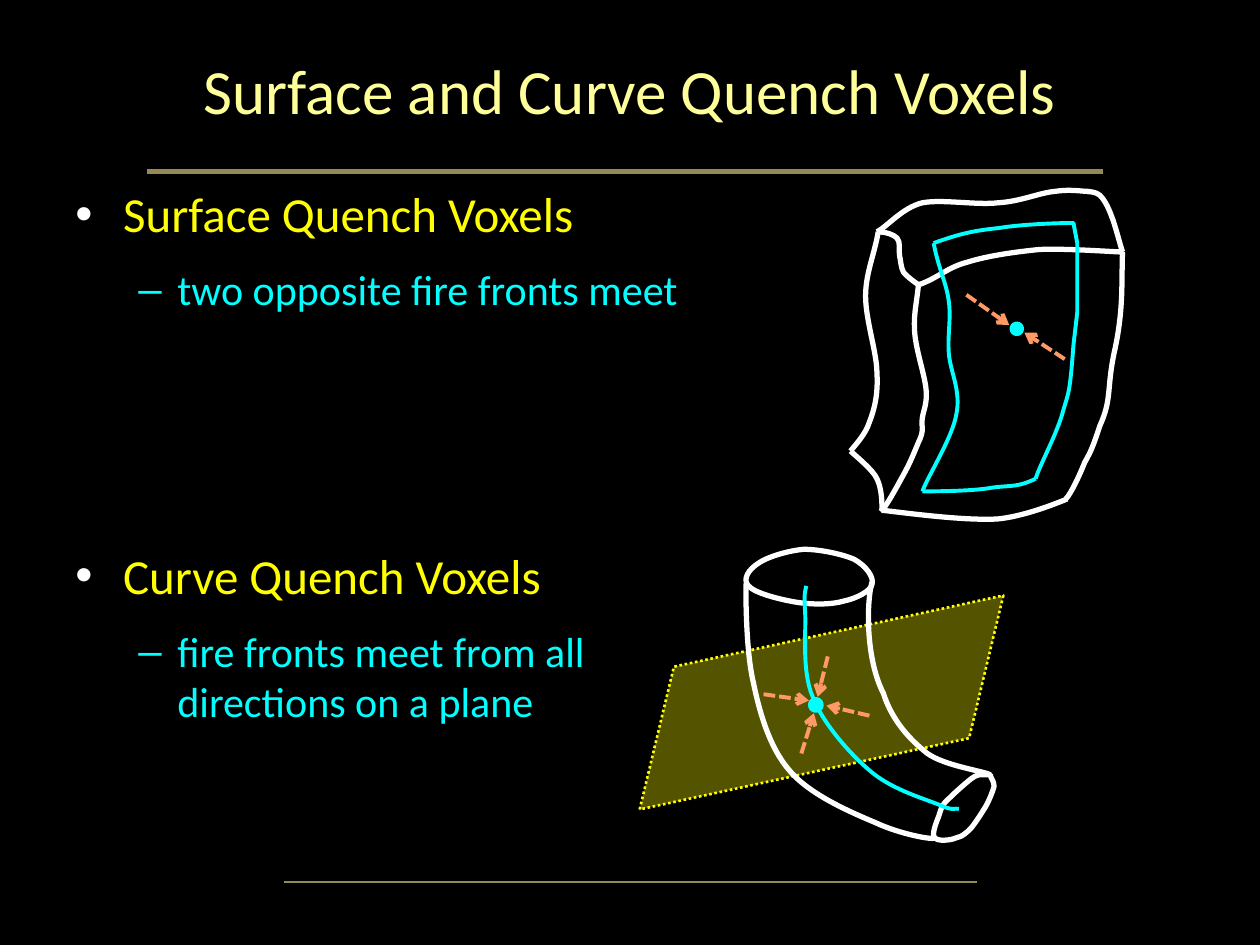
from lxml.etree import SubElement
from pptx import Presentation
from pptx.dml.color import RGBColor
from pptx.enum.dml import MSO_LINE as Dash
from pptx.enum.shapes import MSO_CONNECTOR as Connector, MSO_SHAPE as Shape
from pptx.enum.text import MSO_ANCHOR as Anchor, PP_ALIGN as Align
from pptx.oxml.ns import qn
from pptx.util import Emu, Pt

EMU_PER_PX = 9144
BLACK = RGBColor(0x00, 0x00, 0x00)
WHITE = RGBColor(0xFF, 0xFF, 0xFF)
CREAM = RGBColor(0xFF, 0xFF, 0x99)
YELLOW = RGBColor(0xFF, 0xFF, 0x00)
CYAN = RGBColor(0x00, 0xFF, 0xFF)
ORANGE = RGBColor(0xFF, 0x99, 0x66)
OLIVE = RGBColor(0x94, 0x8A, 0x54)

TITLE_FONT = {"name": "Calibri", "size": Pt(36)}
BULLET_LEVELS = [
    {"mark": "•", "mark_color": "FFFFFF", "left": 38, "hang": 38,
     "color": YELLOW, "font": {"name": "Calibri", "size": Pt(28)},
     "spacing": {"space_before": Pt(0), "space_after": Pt(6)}},
    {"mark": "–", "mark_color": "00FFFF", "left": 81, "hang": 31,
     "color": CYAN, "font": {"name": "Calibri", "size": Pt(24)},
     "spacing": {"level": 1, "space_before": Pt(6), "space_after": Pt(6)}},
]

SHEET_OUTLINES = [
    [(696, 184), (704, 180, 716, 165, 732, 161), (748, 158, 775, 163, 792, 161),
     (810, 160, 825, 153, 837, 152), (849, 150, 859, 152, 864, 152)],
    [(697, 184), (703, 184, 709, 186, 712, 189), (715, 192, 713, 199, 714, 203),
     (715, 208, 715, 212, 717, 216), (720, 220, 729, 226, 729, 226)],
    [(863, 152), (863, 152, 870, 152, 873, 155), (876, 158, 879, 163, 882, 171),
     (885, 178, 890, 198, 891, 200)],
    [(729, 226), (727, 244, 725, 250, 726, 264), (727, 278, 734, 298, 735, 309),
     (736, 321, 733, 325, 732, 332), (731, 339, 734, 341, 729, 351),
     (724, 363, 722, 368, 717, 377), (712, 386, 703, 403, 699, 406)],
    [(891, 200), (890, 223, 892, 244, 885, 277), (878, 308, 883, 316, 873, 338),
     (867, 356, 866, 358, 861, 367), (857, 377, 850, 392, 846, 396)],
    [(700, 405), (733, 409, 766, 413, 791, 412), (815, 410, 847, 396, 847, 396)],
    [(697, 184), (694, 202, 687, 217, 687, 235), (687, 254, 696, 280, 696, 296),
     (697, 313, 694, 325, 690, 335), (687, 345, 678, 354, 675, 358)],
    [(675, 358), (678, 361, 693, 373, 696, 380), (700, 388, 700, 400, 700, 405)],
    [(729, 226), (744, 221, 752, 212, 768, 208), (784, 203, 805, 200, 825, 198),
     (846, 197, 885, 200, 891, 200)],
]
QUENCH_SURFACE = [
    [(741, 193), (763, 185, 774, 183, 793, 181), (811, 178, 840, 177, 852, 177)],
    [(741, 193), (745, 214, 751, 224, 753, 239), (755, 253, 752, 265, 753, 280),
     (754, 295, 763, 310, 759, 329), (756, 347, 737, 377, 732, 390)],
    [(849, 177), (852, 177), (855, 193), (855, 226), (855, 248), (852, 274),
     (849, 315, 848, 311, 843, 329), (838, 346, 824, 372, 822, 380)],
    [(732, 390), (741, 390, 772, 390, 788, 387), (804, 385, 807, 387, 822, 380)],
]
TUBE_SIDES = [
    [(592, 463), (592, 474, 592, 517, 598, 542), (603, 566, 611, 594, 627, 612),
     (643, 631, 676, 645, 695, 653), (714, 662, 741, 667, 742, 665)],
    [(692, 462), (687, 482, 688, 525, 701, 550), (708, 572, 722, 587, 736, 598),
     (750, 608, 781, 612, 786, 615)],
]
TUBE_ENDS = [
    [(785, 615), (783, 615, 779, 615, 777, 615), (775, 616, 775, 615, 771, 618),
     (767, 621, 758, 629, 754, 633), (747, 639, 747, 642, 745, 648),
     (743, 653, 739, 663, 742, 665), (744, 668, 755, 667, 759, 665),
     (764, 664, 767, 661, 771, 657), (775, 652, 780, 644, 783, 639),
     (786, 633, 788, 628, 789, 624), (789, 620, 786, 617, 786, 615)],
    [(594, 465), (599, 471, 620, 476, 632, 478), (645, 480, 660, 480, 670, 477),
     (680, 475, 691, 469, 692, 464), (694, 458, 687, 449, 678, 444),
     (669, 440, 651, 436, 638, 436), (626, 437, 609, 442, 602, 447),
     (594, 452, 589, 460, 594, 465)],
]
QUENCH_CURVE = [
    [(640, 465), (639, 469, 638, 471, 639, 486), (640, 500, 636, 532, 645, 553),
     (653, 574, 675, 599, 692, 613), (709, 627, 734, 634, 746, 639),
     (757, 644, 758, 641, 761, 642)],
]
SURFACE_ARROWS = [(767, 234, 801, 258), (845, 285, 813, 264)]
CURVE_ARROWS = [(690, 568, 656, 560), (657, 521, 649, 553),
                (606, 551, 642, 556), (636, 598, 646, 566)]


def px(value):
    return Emu(value * EMU_PER_PX)


def set_format(target, values):
    for name, value in values.items():
        setattr(target, name, value)


def style_line(line, color, width, dash=None):
    line.color.rgb = color
    set_format(line, {"width": Pt(width), "dash_style": dash})


def style_solid(shape, color, width, dash=None):
    shape.shadow.inherit = False
    shape.fill.solid()
    shape.fill.fore_color.rgb = color
    style_line(shape.line, color, width, dash)


def add_rule(slide, ends, color, width, dash=None):
    connector = slide.shapes.add_connector(Connector.STRAIGHT, *map(px, ends))
    style_line(connector.line, color, width, dash)
    SubElement(connector._element.spPr, qn("a:effectLst"))
    return connector


def add_arrow(slide, ends):
    connector = add_rule(slide, ends, ORANGE, 2.25, Dash.SQUARE_DOT)
    SubElement(connector.line._get_or_add_ln(), qn("a:tailEnd"), type="arrow")


def add_curve(slide, outline, color, width, close=False):
    start, *segments = outline
    points = [segment[i:i + 2] for segment in segments
              for i in range(0, len(segment), 2)]
    builder = slide.shapes.build_freeform(*start, scale=EMU_PER_PX)
    builder.add_line_segments(points, close=close)
    shape = builder.convert_to_shape()
    nodes = iter(list(shape._element.iter(qn("a:lnTo"))))
    for segment in segments:
        node = next(nodes)
        if len(segment) == 6:
            node.tag = qn("a:cubicBezTo")
            for control in (next(nodes), next(nodes)):
                node.append(control[0])
                control.getparent().remove(control)
    shape.shadow.inherit = False
    shape.fill.background()
    style_line(shape.line, color, width)


def add_dot(slide, left, top, size):
    dot = slide.shapes.add_shape(Shape.OVAL, *map(px, (left, top, size, size)))
    style_solid(dot, CYAN, 4)


def add_plane(slide):
    plane = slide.shapes.add_shape(Shape.PARALLELOGRAM, *map(px, (493, 505, 318, 105)))
    plane.adjustments[0] = 0.481
    plane.rotation = 347.8
    style_solid(plane, YELLOW, 1.5, Dash.ROUND_DOT)
    color = plane._element.spPr.find(qn("a:solidFill"))[0]
    SubElement(color, qn("a:alpha"), val="33000")


def add_text_frame(slide, box):
    frame = slide.shapes.add_textbox(*map(px, box)).text_frame
    frame.word_wrap = True
    return frame


def write(paragraph, text, color, font):
    paragraph.add_run().text = text
    run_font = paragraph.runs[0].font
    set_format(run_font, font)
    run_font.color.rgb = color


def add_title(slide, text):
    frame = add_text_frame(slide, (50, 8, 900, 125))
    frame.vertical_anchor = Anchor.MIDDLE
    paragraph = frame.paragraphs[0]
    paragraph.alignment = Align.CENTER
    write(paragraph, text, CREAM, TITLE_FONT)


def add_bullets(slide, top, texts):
    frame = add_text_frame(slide, (50, top, 536, 142))
    for index, (text, level) in enumerate(zip(texts, BULLET_LEVELS)):
        paragraph = frame.add_paragraph() if index else frame.paragraphs[0]
        properties = paragraph._p.get_or_add_pPr()
        properties.set("marL", str(px(level["left"])))
        properties.set("indent", str(px(-level["hang"])))
        mark_color = SubElement(properties, qn("a:buClr"))
        SubElement(mark_color, qn("a:srgbClr"), val=level["mark_color"])
        SubElement(properties, qn("a:buFont"), typeface="Arial")
        SubElement(properties, qn("a:buChar"), char=level["mark"])
        set_format(paragraph, level["spacing"])
        write(paragraph, text, level["color"], level["font"])


def add_sheet_figure(slide):
    for outline in SHEET_OUTLINES:
        add_curve(slide, outline, WHITE, 3)
    for outline in QUENCH_SURFACE:
        add_curve(slide, outline, CYAN, 2.25)
    add_dot(slide, 804, 258, 6)
    for ends in SURFACE_ARROWS:
        add_arrow(slide, ends)


def add_tube_figure(slide):
    add_plane(slide)
    for outline in TUBE_SIDES:
        add_curve(slide, outline, WHITE, 3)
    for outline in TUBE_ENDS:
        add_curve(slide, outline, WHITE, 3, close=True)
    for outline in QUENCH_CURVE:
        add_curve(slide, outline, CYAN, 2.25)
    for ends in CURVE_ARROWS:
        add_arrow(slide, ends)
    add_dot(slide, 644, 556, 7)


def main():
    presentation = Presentation()
    set_format(presentation, {"slide_width": px(1000), "slide_height": px(750)})
    slide = presentation.slides.add_slide(presentation.slide_layouts[6])
    slide.background.fill.solid()
    slide.background.fill.fore_color.rgb = BLACK
    add_rule(slide, (117, 136, 875, 136), OLIVE, 3)
    add_rule(slide, (225, 700, 775, 700), OLIVE, 1)
    add_title(slide, "Surface and Curve Quench Voxels")
    add_bullets(slide, 141, ["Surface Quench Voxels", "two opposite fire fronts meet"])
    add_sheet_figure(slide)
    add_bullets(slide, 428, ["Curve Quench Voxels",
                             "fire fronts meet from all directions on a plane"])
    add_tube_figure(slide)
    presentation.save("out.pptx")


if __name__ == "__main__":
    main()
